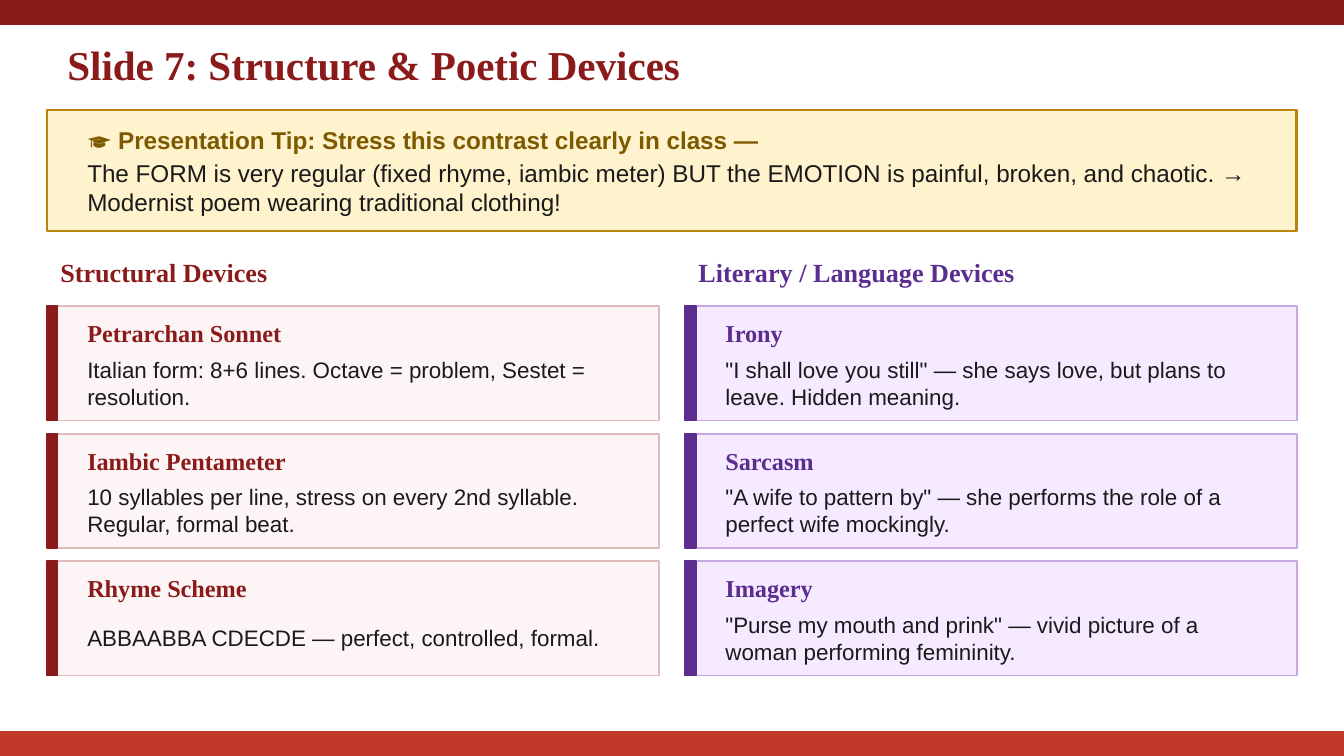
"""Build a slide on the structure and poetic devices of a sonnet."""
import dataclasses
import pptx
import pptx.dml.color
import pptx.enum.shapes
import pptx.enum.text
import pptx.util

TITLE = "Slide 7: Structure & Poetic Devices"
TIP = (
    "🎓 Presentation Tip: Stress this contrast clearly in class —",
    "The FORM is very regular (fixed rhyme, iambic meter) BUT the EMOTION is painful, "
    "broken, and chaotic. → Modernist poem wearing traditional clothing!",
)
GROUPS = [
    ("Structural Devices", [
        ("Petrarchan Sonnet", "Italian form: 8+6 lines. Octave = problem, Sestet = resolution."),
        ("Iambic Pentameter",
         "10 syllables per line, stress on every 2nd syllable. Regular, formal beat."),
        ("Rhyme Scheme", "ABBAABBA CDECDE — perfect, controlled, formal."),
    ]),
    ("Literary / Language Devices", [
        ("Irony", '"I shall love you still" — she says love, but plans to leave. Hidden meaning.'),
        ("Sarcasm", '"A wife to pattern by" — she performs the role of a perfect wife mockingly.'),
        ("Imagery", '"Purse my mouth and prink" — vivid picture of a woman performing femininity.'),
    ]),
]


@dataclasses.dataclass(frozen=True)
class Theme:
    """Hold the colours, fonts and type sizes."""
    serif: str = "Times New Roman"
    sans: str = "Arial"
    red: str = "8B1A1A"
    foot: str = "C0392B"
    ink: str = "1A1A1A"
    tip: tuple = ("FFF3CD", "B7860B")
    gold: str = "7D5A00"
    groups: tuple = (("8B1A1A", "FDF5F5", "E0BBBB"), ("5B2D8E", "F5EAFF", "C8A8E0"))
    title: int = 22
    head: int = 14
    label: int = 13
    body: int = 12


LOOK = Theme()
WIDTH, HEIGHT = 25.4, 14.29
BAR = 0.46
EDGE = 0.89
FULL = WIDTH - 2 * EDGE
GAP = 0.5
COL = (FULL - GAP) / 2
INSET = 0.51
CARD_TOP, CARD, PITCH = 5.79, 2.16, 2.41


def cms(*box):
    """Turn centimetres into slide lengths."""
    return [pptx.util.Cm(n) for n in box]


def tint(code):
    """Read a colour code."""
    return pptx.dml.color.RGBColor.from_string(code)


def panel(slide, box, fill, edge=None, weight=1):
    """Draw a filled rectangle."""
    shape = slide.shapes.add_shape(pptx.enum.shapes.MSO_SHAPE.RECTANGLE, *cms(*box))
    shape.shadow.inherit = False
    shape.fill.solid()
    shape.fill.fore_color.rgb = tint(fill)
    shape.line.color.rgb = tint(edge or fill)
    shape.line.width = pptx.util.Pt(weight)


def write(slide, box, text, size, color, font=LOOK.sans, bold=False, holder=None):
    """Set text in a new box or in the given placeholder."""
    place = cms(*box)
    shape = holder or slide.shapes.add_textbox(*place)
    shape.left, shape.top, shape.width, shape.height = place
    frame = shape.text_frame
    frame.text = text
    frame.word_wrap = True
    frame.auto_size = pptx.enum.text.MSO_AUTO_SIZE.NONE
    frame.vertical_anchor = pptx.enum.text.MSO_ANCHOR.MIDDLE
    line = frame.paragraphs[0]
    line.alignment = pptx.enum.text.PP_ALIGN.LEFT
    style = line.runs[0].font
    style.name, style.size, style.bold = font, pptx.util.Pt(size), bold
    style.color.rgb = tint(color)


def card(slide, left, top, label, body, colors):
    """Draw one device with its coloured stripe."""
    main, fill, edge = colors
    panel(slide, (left, top, COL, CARD), fill, edge)
    panel(slide, (left, top, 0.2, CARD), main)
    inner, width = left + INSET, 10.67
    write(slide, (inner, top + 0.15, width, 0.71), label, LOOK.label, main, LOOK.serif, True)
    write(slide, (inner, top + 0.91, width, 1.07), body, LOOK.body, LOOK.ink)


def main():
    """Lay out and save the slide."""
    deck = pptx.Presentation()
    deck.slide_width, deck.slide_height = cms(WIDTH, HEIGHT)
    slide = deck.slides.add_slide(deck.slide_layouts[5])
    panel(slide, (0, 0, WIDTH, BAR), LOOK.red)
    panel(slide, (0, HEIGHT - BAR, WIDTH, BAR), LOOK.foot)
    write(slide, (1.02, 0.64, 23.37, 1.14), TITLE, LOOK.title, LOOK.red, LOOK.serif, True,
          slide.shapes.title)
    panel(slide, (EDGE, 2.08, FULL, 2.29), *LOOK.tip, weight=1.5)
    lead, point = TIP
    inner = EDGE + INSET
    write(slide, (inner, 2.24, 22.86, 0.81), lead, LOOK.label, LOOK.gold, bold=True)
    write(slide, (inner, 3, 22.86, 1.07), point, LOOK.label, LOOK.ink)
    for col, ((head, cards), colors) in enumerate(zip(GROUPS, LOOK.groups)):
        left = EDGE + col * (COL + GAP)
        write(slide, (left, 4.7, COL, 0.89), head, LOOK.head, colors[0], LOOK.serif, True)
        for row, (label, body) in enumerate(cards):
            card(slide, left, CARD_TOP + row * PITCH, label, body, colors)
    deck.save("out.pptx")


if __name__ == "__main__":
    main()
